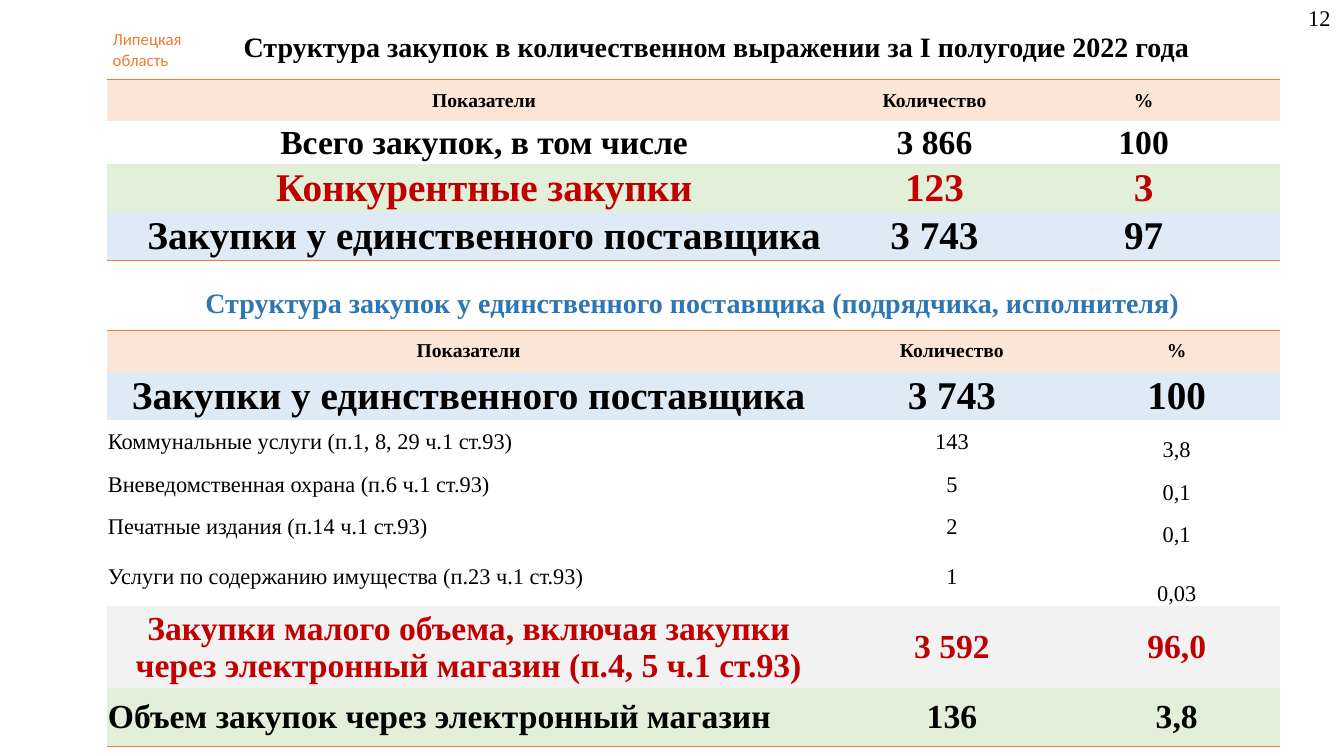
import dataclasses

import pptx
import pptx.dml.color
import pptx.enum.text
import pptx.oxml
import pptx.oxml.ns
import pptx.util
from lxml import etree

Cm = pptx.util.Cm
Align = pptx.enum.text.PP_ALIGN
Anchor = pptx.enum.text.MSO_ANCHOR
NO_GRID_STYLE = "{2D5ABB26-0587-4C30-8999-92F81FD0307C}"


@dataclasses.dataclass(frozen=True)
class Theme:
    serif: str = "Times New Roman"
    sans: str = "Calibri"
    black: str = "000000"
    red: str = "C00000"
    blue: str = "2E75B6"
    orange: str = "ED7D31"
    peach: str = "FBE5D6"
    white: str = "FFFFFF"
    pale_green: str = "E2F0D9"
    pale_blue: str = "DEEBF7"
    pale_gray: str = "F2F2F2"
    tiny: int = 12
    small: int = 14
    body: int = 16
    heading: int = 20
    large: int = 24
    huge: int = 28
    rule: int = 1


@dataclasses.dataclass(frozen=True)
class Row:
    height: float
    values: tuple
    fill: str
    size: int
    color: str = Theme.black
    bold: bool = True
    label_align: Align = Align.CENTER
    share_anchor: Anchor = Anchor.MIDDLE
    inset: float = 0.03


class Page:
    def __init__(self, deck, theme):
        self.theme = theme
        self.slide = deck.slides.add_slide(deck.slide_layouts[6])

    def set_text(self, frame, text, size, color, bold, align, font):
        frame.text = text
        for para in frame.paragraphs:
            para.alignment = align
            for span in para.runs:
                span.font.name = font
                span.font.size = pptx.util.Pt(size)
                span.font.bold = bold
                span.font.color.rgb = pptx.dml.color.RGBColor.from_string(color)

    def text(self, place, text, size, color, bold=False, align=Align.LEFT, font=Theme.serif):
        box = self.slide.shapes.add_textbox(*map(Cm, place))
        box.text_frame.word_wrap = True
        box.text_frame.auto_size = pptx.enum.text.MSO_AUTO_SIZE.SHAPE_TO_FIT_TEXT
        self.set_text(box.text_frame, text, size, color, bold, align, font)

    def border(self, cell, side):
        properties = cell._tc.get_or_add_tcPr()
        line = etree.Element(pptx.oxml.ns.qn(f"a:{side}"), w=str(pptx.util.Pt(self.theme.rule)))
        fill = etree.SubElement(line, pptx.oxml.ns.qn("a:solidFill"))
        etree.SubElement(fill, pptx.oxml.ns.qn("a:srgbClr"), val=self.theme.orange)
        properties.insert(0, line)

    def table(self, left, top, widths, rows):
        height = sum(row.height for row in rows)
        frame = self.slide.shapes.add_table(
            len(rows), len(widths), Cm(left), Cm(top), Cm(sum(widths)), Cm(height))
        table = frame.table
        table.horz_banding = False
        table.first_row = False
        table._tbl.tblPr.find(pptx.oxml.ns.qn("a:tableStyleId")).text = NO_GRID_STYLE
        for column, width in zip(table.columns, widths):
            column.width = Cm(width)
        for index, row in enumerate(rows):
            table.rows[index].height = Cm(row.height)
            for position, value in enumerate(row.values):
                cell = table.cell(index, position)
                self.fill_cell(cell, row, position, value)
                if index == 0:
                    self.border(cell, "lnT")
                if index == len(rows) - 1:
                    self.border(cell, "lnB")

    def fill_cell(self, cell, row, position, value):
        cell.fill.solid()
        cell.fill.fore_color.rgb = pptx.dml.color.RGBColor.from_string(row.fill)
        cell.margin_left = cell.margin_right = cell.margin_top = Cm(row.inset)
        cell.margin_bottom = 0
        cell.vertical_anchor = row.share_anchor if position == 2 else Anchor.MIDDLE
        align = row.label_align if position == 0 else Align.CENTER
        self.set_text(cell.text_frame, value, row.size, row.color, row.bold, align,
                      self.theme.serif)


def main():
    theme = Theme()
    deck = pptx.Presentation()
    deck.slide_width, deck.slide_height = Cm(33.87), Cm(19.05)
    page = Page(deck, theme)

    header = Row(1.04, ("Показатели", "Количество", "%"), theme.peach, theme.small, inset=0)
    single_supplier = "Закупки у единственного поставщика"

    def detail(height, *values):
        return Row(height, values, theme.white, theme.body, bold=False,
                   label_align=Align.LEFT, share_anchor=Anchor.BOTTOM)

    page.text((2.59, 0.61, 2.31, 1.27), "Липецкая\nобласть", theme.tiny, theme.orange,
              font=theme.sans)
    page.text((4.32, 7.06, 26.26, 1.12),
              "Структура закупок у единственного поставщика (подрядчика, исполнителя)",
              theme.heading, theme.blue, True, Align.CENTER)
    page.table(2.69, 2.01, (19.02, 3.68, 6.86), [
        header,
        Row(1.07, ("Всего закупок, в том числе", "3 866", "100"), theme.white, theme.large),
        Row(1.09, ("Конкурентные закупки", "123", "3"), theme.pale_green, theme.huge, theme.red),
        Row(1.19, (single_supplier, "3 743", "97"), theme.pale_blue, theme.huge),
    ])
    page.text((32.72, -0.03, 1.17, 0.94), "12", theme.body, theme.black)
    page.table(2.69, 8.33, (18.24, 6.12, 5.21), [
        header,
        Row(1.22, (single_supplier, "3 743", "100"), theme.pale_blue, theme.huge),
        detail(1.07, "Коммунальные услуги (п.1, 8, 29 ч.1 ст.93)", "143", "3,8"),
        detail(1.07, "Вневедомственная охрана (п.6 ч.1 ст.93)", "5", "0,1"),
        detail(1.07, "Печатные издания (п.14 ч.1 ст.93)", "2", "0,1"),
        detail(1.47, "Услуги по содержанию имущества (п.23 ч.1 ст.93)", "1", "0,03"),
        Row(1.75, ("Закупки малого объема, включая закупки через электронный магазин "
                   "(п.4, 5 ч.1 ст.93)", "3 592", "96,0"),
            theme.pale_gray, theme.large, theme.red),
        Row(1.47, ("Объем закупок через электронный магазин", "136", "3,8"),
            theme.pale_green, theme.large, label_align=Align.LEFT),
    ])
    page.text((4.93, 0.61, 26.26, 1.12),
              "Структура закупок в количественном выражении за I полугодие 2022 года",
              theme.heading, theme.black, True, Align.CENTER)
    deck.save("out.pptx")


if __name__ == "__main__":
    main()
